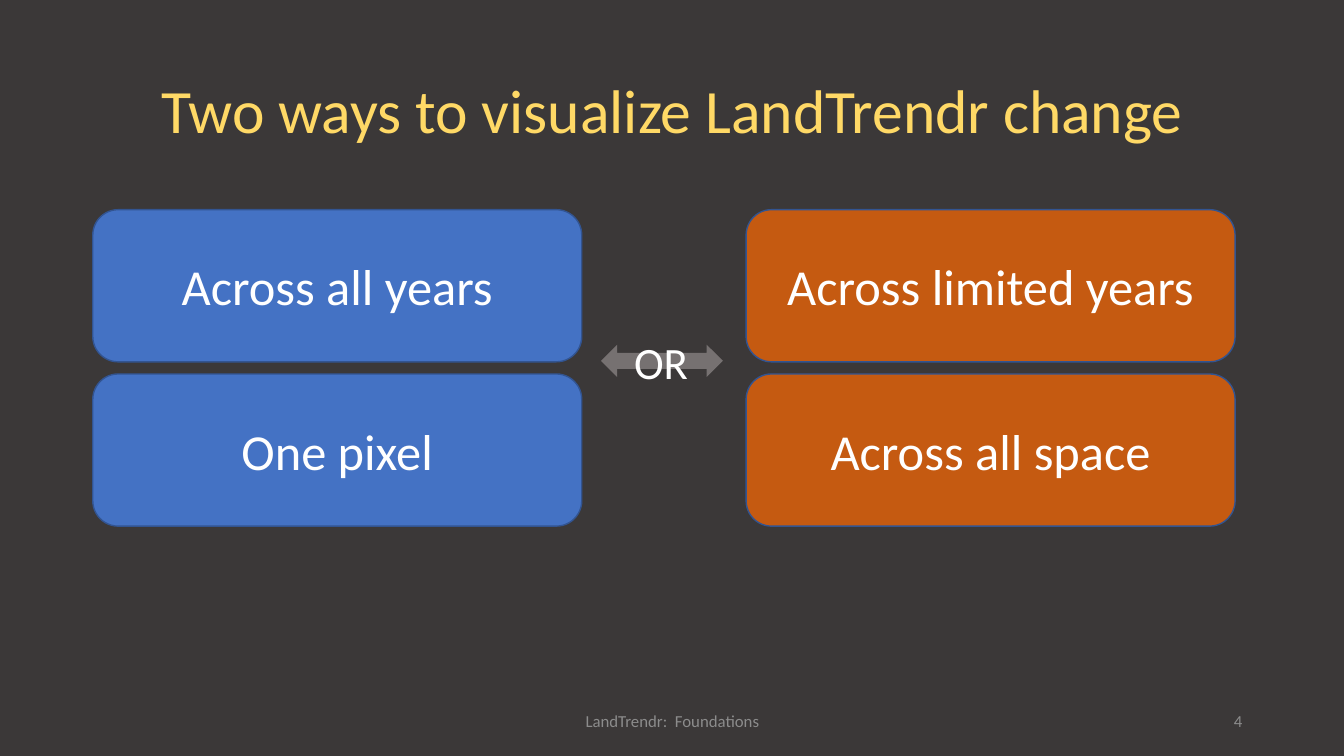
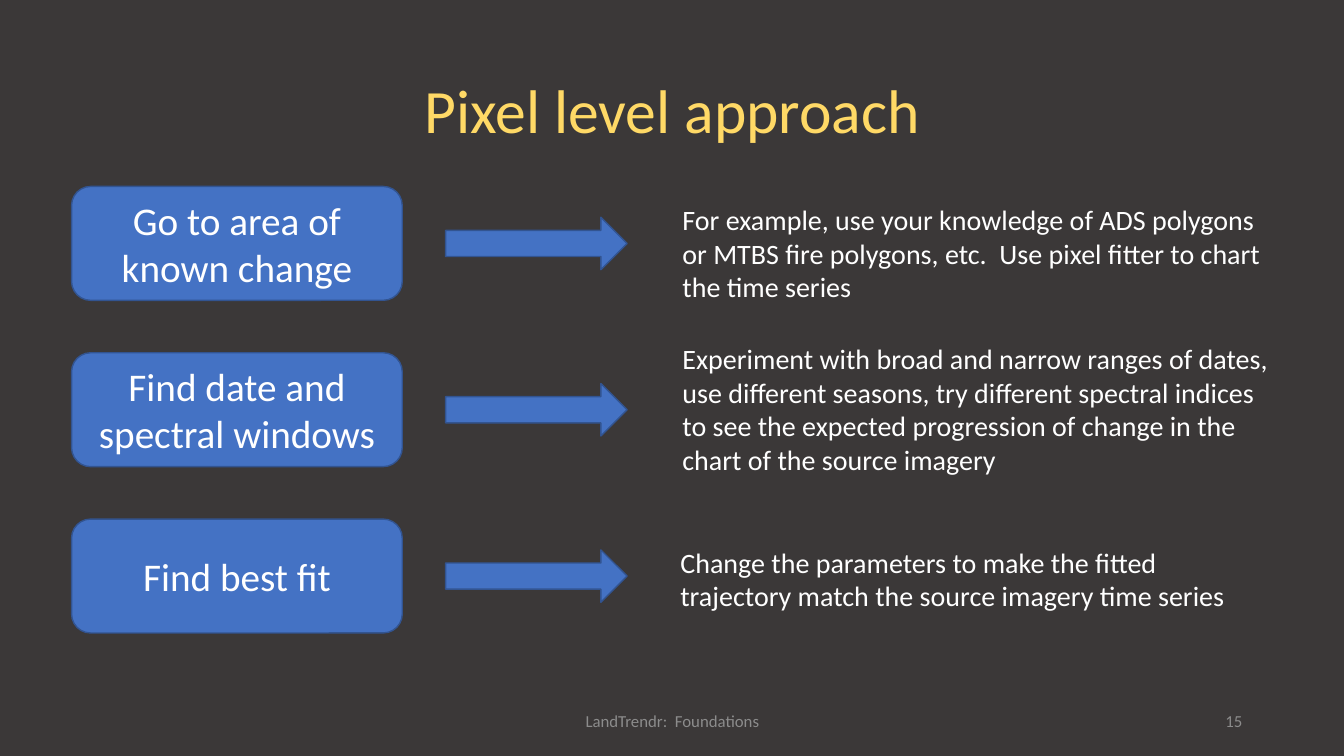
from pptx import Presentation
from pptx.dml.color import RGBColor
from pptx.enum.shapes import MSO_SHAPE
from pptx.enum.text import MSO_ANCHOR, PP_ALIGN
from pptx.util import Inches, Pt

ROUNDED = MSO_SHAPE.ROUNDED_RECTANGLE
RIGHT_ARROW = MSO_SHAPE.RIGHT_ARROW
DOUBLE_ARROW = MSO_SHAPE.LEFT_RIGHT_ARROW
TOP, MIDDLE = MSO_ANCHOR.TOP, MSO_ANCHOR.MIDDLE
LEFT, CENTER, RIGHT = PP_ALIGN.LEFT, PP_ALIGN.CENTER, PP_ALIGN.RIGHT

FONT = "Calibri"
BACKGROUND = RGBColor(0x3B, 0x38, 0x38)
TITLE_YELLOW = RGBColor(0xFF, 0xD9, 0x66)
FOOTER_GRAY = RGBColor(0x8C, 0x8C, 0x8C)
WHITE = RGBColor(0xFF, 0xFF, 0xFF)
BLUE = RGBColor(0x44, 0x72, 0xC4)
ORANGE = RGBColor(0xC5, 0x5A, 0x11)
OUTLINE = RGBColor(0x32, 0x54, 0x91)
ARROW_GRAY = RGBColor(0x76, 0x71, 0x71)

SLIDE_WIDTH, SLIDE_HEIGHT = 13.33, 7.5
MARGIN = 0.92
FOOTER_TOP, FOOTER_HEIGHT = 6.95, 0.4
FOOTER_TEXT = "LandTrendr:  Foundations"

# Two columns of options: left edge, colour, labels from top to bottom
OPTIONS = [
    (MARGIN, BLUE, ["Across all years", "One pixel"]),
    (7.4, ORANGE, ["Across limited years", "Across all space"]),
]
OPTION_TOP, OPTION_WIDTH, OPTION_HEIGHT, OPTION_PITCH = 2.08, 4.85, 1.51, 1.63

# Steps: label, explanation, and the explanation's left, top and height
STEPS = [
    ("Go to area of known change",
     "For example, use your knowledge of ADS polygons or MTBS fire polygons, "
     "etc.  Use pixel fitter to chart the time series", 6.67, 1.96, 1.11),
    ("Find date and spectral windows",
     "Experiment with broad and narrow ranges of dates, use different seasons, "
     "try different spectral indices to see the expected progression of change "
     "in the chart of the source imagery", 6.67, 3.34, 1.45),
    ("Find best fit",
     "Change the parameters to make the fitted trajectory match the source "
     "imagery time series", 6.65, 5.36, 0.77),
]
STEP_LEFT, STEP_TOP, STEP_WIDTH, STEP_HEIGHT = 0.71, 1.85, 3.28, 1.13
STEP_PITCH = 1.65
ARROW_LEFT, ARROW_WIDTH, ARROW_HEIGHT = 4.42, 1.8, 0.52
EXPLANATION_WIDTH = 6.07


def write(shape, text, size, color, align=LEFT, anchor=TOP, wrap=True):
    frame = shape.text_frame
    frame.text = text
    frame.word_wrap = wrap
    frame.vertical_anchor = anchor
    para = frame.paragraphs[0]
    para.alignment = align
    font = para.runs[0].font
    font.name, font.size = FONT, Pt(size)
    font.color.rgb = color
    return para


def add_text(page, area, text, size, color, **style):
    box = page.shapes.add_textbox(*map(Inches, area))
    return write(box, text, size, color, **style)


def add_block(page, kind, area, fill, outline=OUTLINE):
    """Add a flat filled shape; an outline of None leaves the edge bare."""
    block = page.shapes.add_shape(kind, *map(Inches, area))
    block.shadow.inherit = False
    block.fill.solid()
    block.fill.fore_color.rgb = fill
    if outline is None:
        block.line.fill.background()
    else:
        block.line.color.rgb = outline
        block.line.width = Pt(1)
    return block


def add_label_block(page, area, fill, text, size):
    block = add_block(page, ROUNDED, area, fill)
    write(block, text, size, WHITE, align=CENTER, anchor=MIDDLE)


def add_page(deck, title, number):
    """Add a slide with the shared background, title and footer."""
    page = deck.slides.add_slide(deck.slide_layouts[6])
    page.background.fill.solid()
    page.background.fill.fore_color.rgb = BACKGROUND
    para = add_text(page, (MARGIN, 0.4, 11.5, 1.45), title, 44, TITLE_YELLOW,
                    align=CENTER, anchor=MIDDLE)
    para.line_spacing = 0.9
    for left, width, text, align in [(4.42, 4.5, FOOTER_TEXT, CENTER),
                                     (9.42, 3, str(number), RIGHT)]:
        add_text(page, (left, FOOTER_TOP, width, FOOTER_HEIGHT), text, 12,
                 FOOTER_GRAY, align=align, anchor=MIDDLE)
    return page


def add_options_page(deck):
    page = add_page(deck, "Two ways to visualize LandTrendr change", 4)
    add_block(page, DOUBLE_ARROW, (5.96, 3.42, 1.21, 0.32), ARROW_GRAY, None)
    for left, color, labels in OPTIONS:
        for row, label in enumerate(labels):
            top = OPTION_TOP + row * OPTION_PITCH
            add_label_block(page, (left, top, OPTION_WIDTH, OPTION_HEIGHT),
                            color, label, 36)
    add_text(page, (6.19, 3.27, 0.79, 0.64), "OR", 32, WHITE, wrap=False)


def add_steps_page(deck):
    page = add_page(deck, "Pixel level approach", 15)
    for row, (label, explanation, left, text_top, height) in enumerate(STEPS):
        top = STEP_TOP + row * STEP_PITCH
        arrow_top = top + (STEP_HEIGHT - ARROW_HEIGHT) / 2
        add_label_block(page, (STEP_LEFT, top, STEP_WIDTH, STEP_HEIGHT),
                        BLUE, label, 28)
        add_block(page, RIGHT_ARROW,
                  (ARROW_LEFT, arrow_top, ARROW_WIDTH, ARROW_HEIGHT), BLUE)
        add_text(page, (left, text_top, EXPLANATION_WIDTH, height),
                 explanation, 20, WHITE)


def main():
    deck = Presentation()
    deck.slide_width = Inches(SLIDE_WIDTH)
    deck.slide_height = Inches(SLIDE_HEIGHT)
    add_options_page(deck)
    add_steps_page(deck)
    deck.save("out.pptx")


if __name__ == "__main__":
    main()
